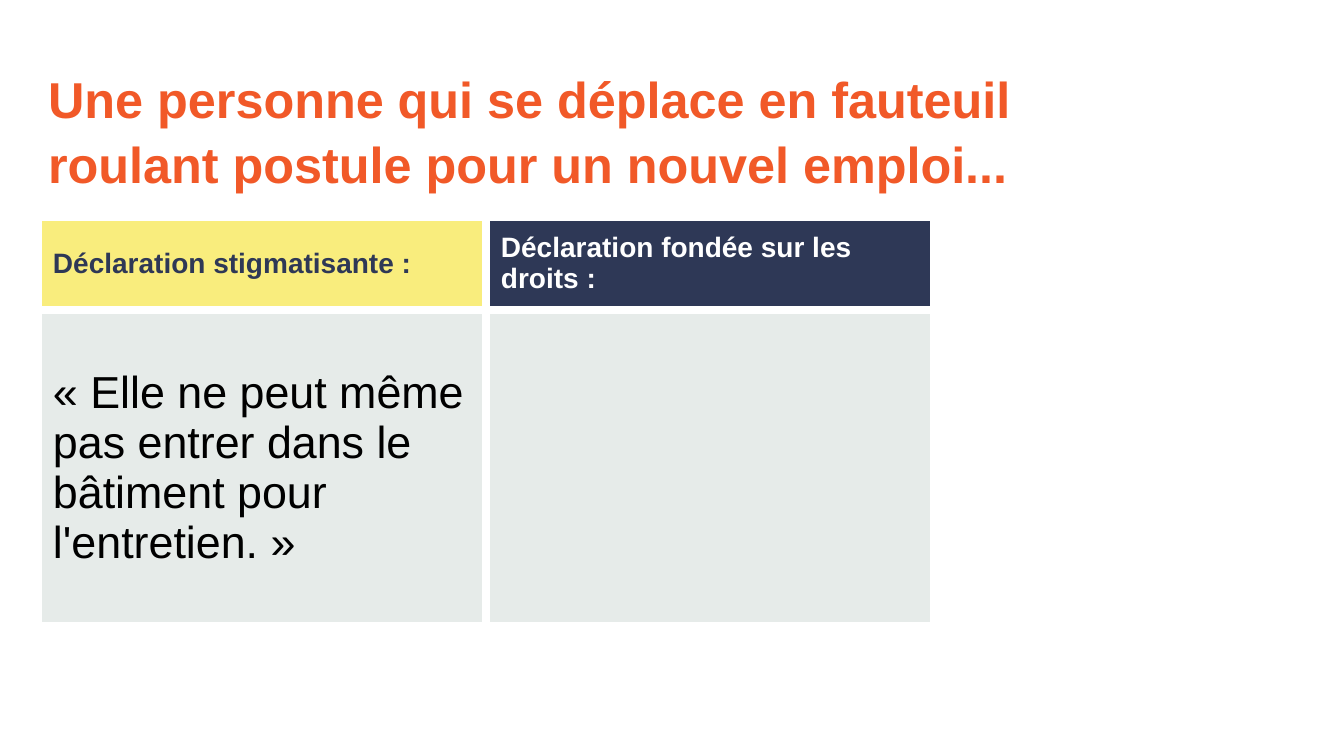
from lxml import etree
from pptx import Presentation
from pptx.dml.color import RGBColor
from pptx.enum.text import MSO_ANCHOR, MSO_AUTO_SIZE, PP_ALIGN
from pptx.oxml.ns import qn
from pptx.util import Emu, Pt

LEFT, TOP, MIDDLE = PP_ALIGN.LEFT, MSO_ANCHOR.TOP, MSO_ANCHOR.MIDDLE
FONT = "Arial"
COLORS = {"orange": "F15928", "yellow": "F9ED7D", "navy": "2E3856",
          "grey": "E6EBE9", "white": "FFFFFF", "black": "000000"}

TITLE = "Une personne qui se déplace en fauteuil roulant postule pour un nouvel emploi..."
# Each cell: text, size, bold, text colour, fill
ROWS = [
    [("Déclaration stigmatisante :", 20, True, "navy", "yellow"),
     ("Déclaration fondée sur les droits :", 20, True, "white", "navy")],
    [("« Elle ne peut même pas entrer dans le bâtiment pour l'entretien. »",
      32, False, "black", "grey"),
     ("", 32, False, "black", "grey")],
]
TITLE_BOX = (38, 54, 1090, 146)
TABLE_LEFT, TABLE_TOP = 38, 217
COL_WIDTH = 448
ROW_HEIGHTS = [93, 316]
BORDER_PT = 6


def px(n):
    return Emu(round(n * 914400 / 100.8))


def rgb(name):
    return RGBColor.from_string(COLORS[name])


def add_run(p, text, size, bold, color):
    r = p.add_run()
    r.text = text
    r.font.name, r.font.size, r.font.bold = FONT, Pt(size), bold
    r.font.color.rgb = rgb(color)


def set_insets(target, inset):
    target.margin_left = target.margin_right = px(inset)
    target.margin_top = target.margin_bottom = px(inset)


def set_borders(cell, color):
    tcPr = cell._tc.get_or_add_tcPr()
    for i, side in enumerate(("lnL", "lnR", "lnT", "lnB")):
        ln = etree.Element(qn(f"a:{side}"), w=str(Pt(BORDER_PT)))
        fill = etree.SubElement(ln, qn("a:solidFill"))
        etree.SubElement(fill, qn("a:srgbClr"), val=COLORS[color])
        tcPr.insert(i, ln)


def add_title(s):
    title = s.shapes.title
    title.left, title.top, title.width, title.height = map(px, TITLE_BOX)
    tf = title.text_frame
    tf.word_wrap, tf.auto_size = True, MSO_AUTO_SIZE.NONE
    tf.vertical_anchor = TOP
    set_insets(tf, 10)
    p = tf.paragraphs[0]
    p.alignment, p.line_spacing = LEFT, 1.07
    p.space_before = Pt(0)
    add_run(p, TITLE, 36, True, "orange")


def add_statements(s):
    n_cols = len(ROWS[0])
    table = s.shapes.add_table(
        len(ROWS), n_cols, px(TABLE_LEFT), px(TABLE_TOP),
        px(COL_WIDTH * n_cols), px(sum(ROW_HEIGHTS))).table
    for col in table.columns:
        col.width = px(COL_WIDTH)
    for i, (height, row) in enumerate(zip(ROW_HEIGHTS, ROWS)):
        table.rows[i].height = px(height)
        for j, (text, size, bold, color, fill) in enumerate(row):
            cell = table.cell(i, j)
            cell.fill.solid()
            cell.fill.fore_color.rgb = rgb(fill)
            set_borders(cell, "white")
            cell.vertical_anchor = MIDDLE
            set_insets(cell, 15)
            if text:
                add_run(cell.text_frame.paragraphs[0], text, size, bold, color)


def main():
    prs = Presentation()
    prs.slide_width, prs.slide_height = px(1344), px(756)
    s = prs.slides.add_slide(prs.slide_layouts[5])
    add_title(s)
    add_statements(s)
    prs.save("out.pptx")


if __name__ == "__main__":
    main()
